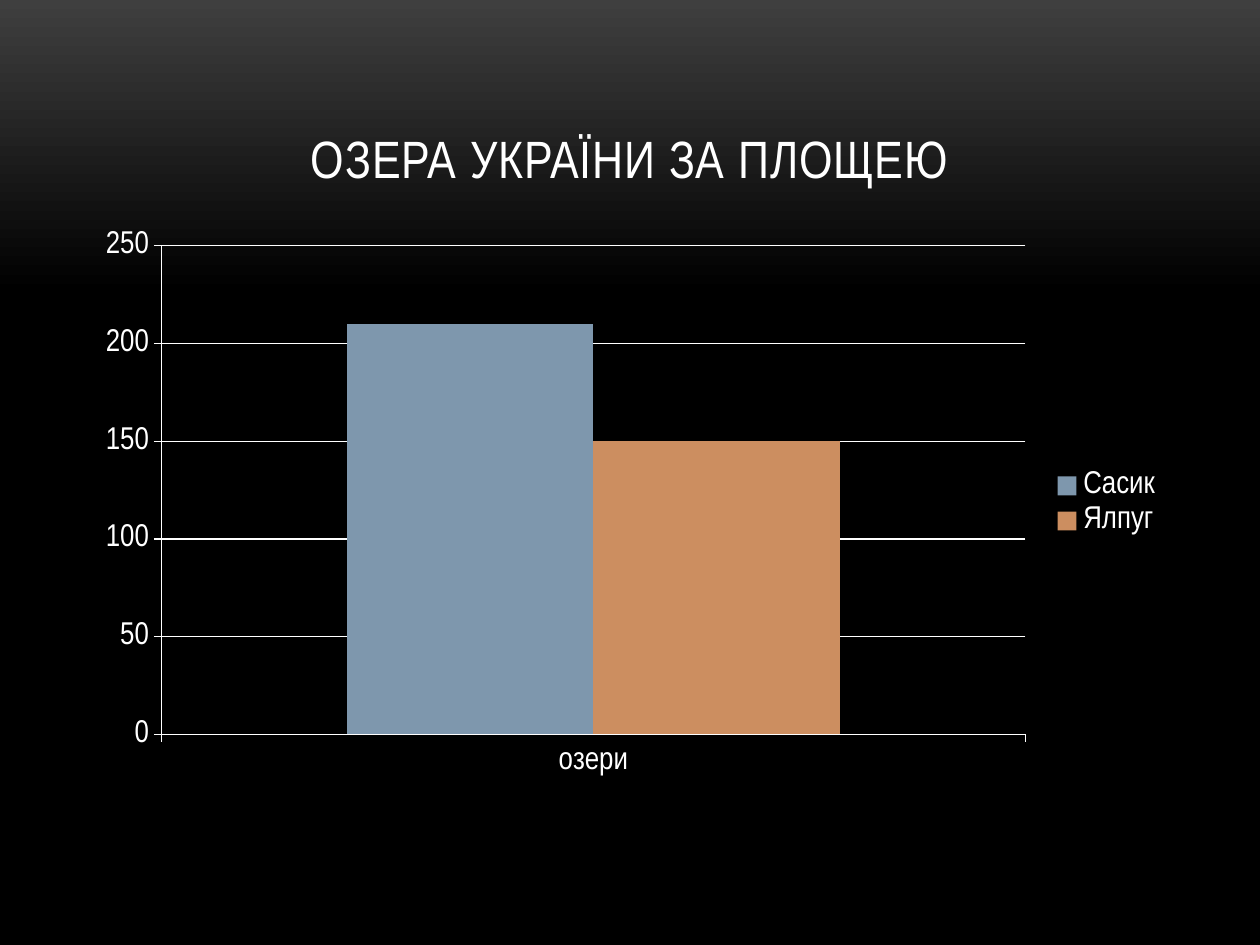
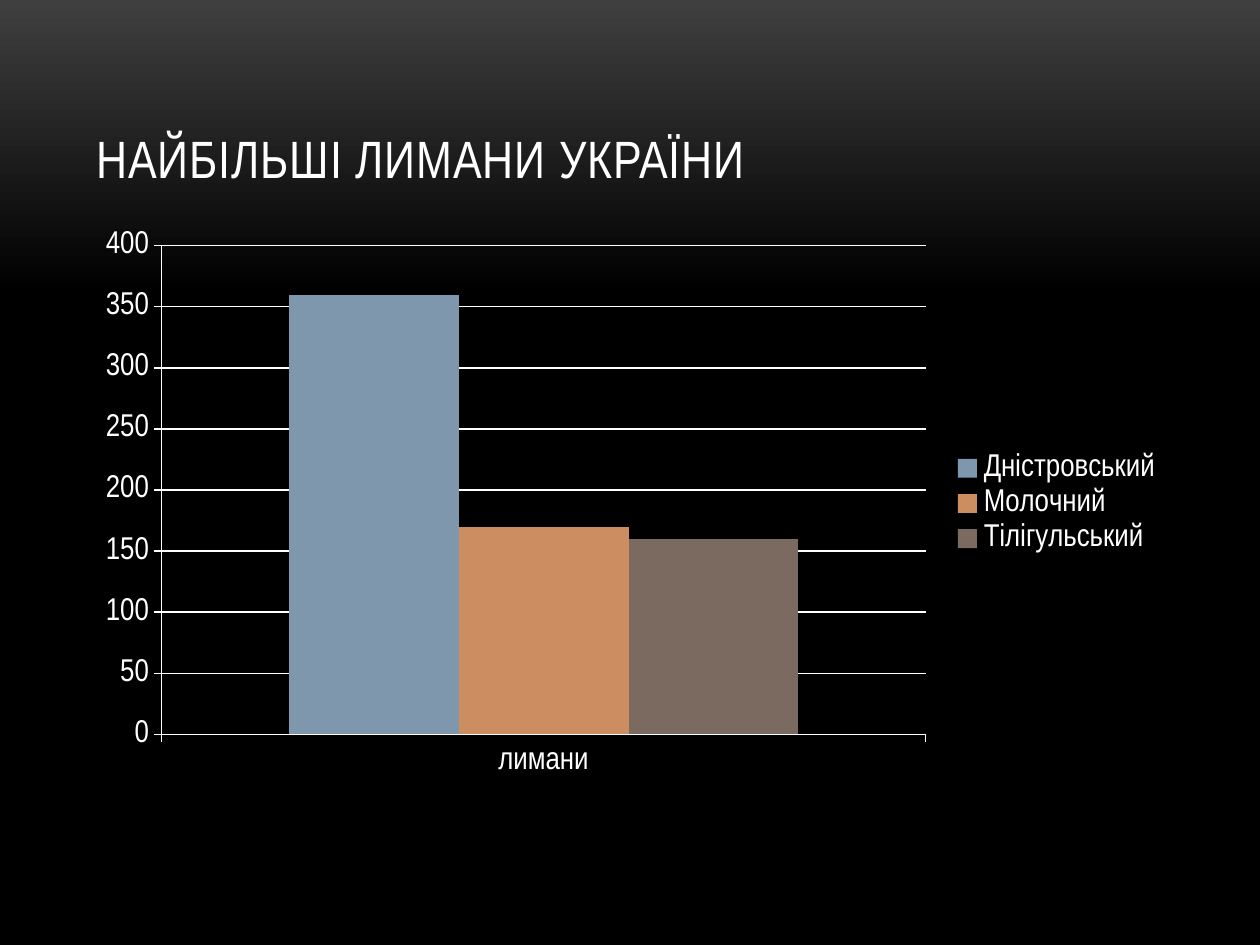
from pptx import Presentation
from pptx.chart.data import CategoryChartData
from pptx.dml.color import RGBColor
from pptx.enum.chart import XL_CHART_TYPE, XL_LEGEND_POSITION, XL_TICK_MARK
from pptx.enum.text import MSO_ANCHOR, PP_ALIGN
from pptx.util import Pt

COLUMN = XL_CHART_TYPE.COLUMN_CLUSTERED
RIGHT = XL_LEGEND_POSITION.RIGHT
OUTSIDE = XL_TICK_MARK.OUTSIDE
BOTTOM = MSO_ANCHOR.BOTTOM
CENTER = PP_ALIGN.CENTER
JUSTIFY = PP_ALIGN.JUSTIFY

SLIDES = [
    {"title": "ОЗЕРА УКРАЇНИ ЗА ПЛОЩЕЮ", "align": CENTER, "category": "озери", "top": 250,
     "series": [("Сасик", 210), ("Ялпуг", 150)]},
    {"title": "НАЙБІЛЬШІ ЛИМАНИ УКРАЇНИ", "align": JUSTIFY, "category": "лимани", "top": 400,
     "series": [("Дністровський", 360), ("Молочний", 170), ("Тілігульський", 160)]},
]

FONT = "Arial Narrow"
WHITE = "FFFFFF"
SERIES_COLORS = ["7E97AD", "CC8E60", "7A6A60"]
BACKGROUND = [(0, "3F3F3F"), (0.31, "000000")]
SLIDE_W, SLIDE_H = 1260, 945
MARGIN = 84
CONTENT_W = SLIDE_W - 2 * MARGIN
TITLE_Y, TITLE_H = 38, 157
CHART_Y, CHART_H = 220, 567


def px(n):
    return round(n * 914400 / 126)


def rgb(value):
    return RGBColor.from_string(value)


def style_font(font, size):
    font.name = FONT
    font.size = Pt(size)
    font.color.rgb = rgb(WHITE)


def style_line(line):
    line.color.rgb = rgb(WHITE)
    line.width = Pt(0.75)


def set_background(slide):
    fill = slide.background.fill
    fill.gradient()
    fill.gradient_angle = 270
    for stop, (position, color) in zip(fill.gradient_stops, BACKGROUND):
        stop.position = position
        stop.color.rgb = rgb(color)


def add_title(slide, text, align=CENTER, size=30, spacing=50):
    tf = slide.shapes.add_textbox(px(MARGIN), px(TITLE_Y), px(CONTENT_W), px(TITLE_H)).text_frame
    tf.word_wrap = True
    tf.vertical_anchor = BOTTOM
    p = tf.paragraphs[0]
    p.alignment = align
    r = p.add_run()
    r.text = text
    style_font(r.font, size)
    r.font._element.set("spc", str(spacing))


def add_column_chart(slide, category, series, top):
    data = CategoryChartData()
    data.categories = [category]
    for name, value in series:
        data.add_series(name, [value])
    chart = slide.shapes.add_chart(
        COLUMN, px(MARGIN), px(CHART_Y), px(CONTENT_W), px(CHART_H), data).chart
    style_font(chart.font, 18)
    chart.has_title = False
    chart.has_legend = True
    chart.legend.position = RIGHT
    chart.legend.include_in_layout = False

    plot = chart.plots[0]
    plot.gap_width = 150
    plot.overlap = 0
    plot.vary_by_categories = False
    for s, color in zip(plot.series, SERIES_COLORS):
        s.format.fill.solid()
        s.format.fill.fore_color.rgb = rgb(color)

    for axis in (chart.category_axis, chart.value_axis):
        axis.major_tick_mark = OUTSIDE
        style_line(axis.format.line)
    values = chart.value_axis
    values.minimum_scale, values.maximum_scale, values.major_unit = 0, top, 50
    values.has_major_gridlines = True
    style_line(values.major_gridlines.format.line)


def main():
    prs = Presentation()
    prs.slide_width, prs.slide_height = px(SLIDE_W), px(SLIDE_H)
    for item in SLIDES:
        slide = prs.slides.add_slide(prs.slide_layouts[6])
        set_background(slide)
        add_title(slide, item["title"], align=item["align"])
        add_column_chart(slide, item["category"], item["series"], item["top"])
    prs.save("out.pptx")


if __name__ == "__main__":
    main()
